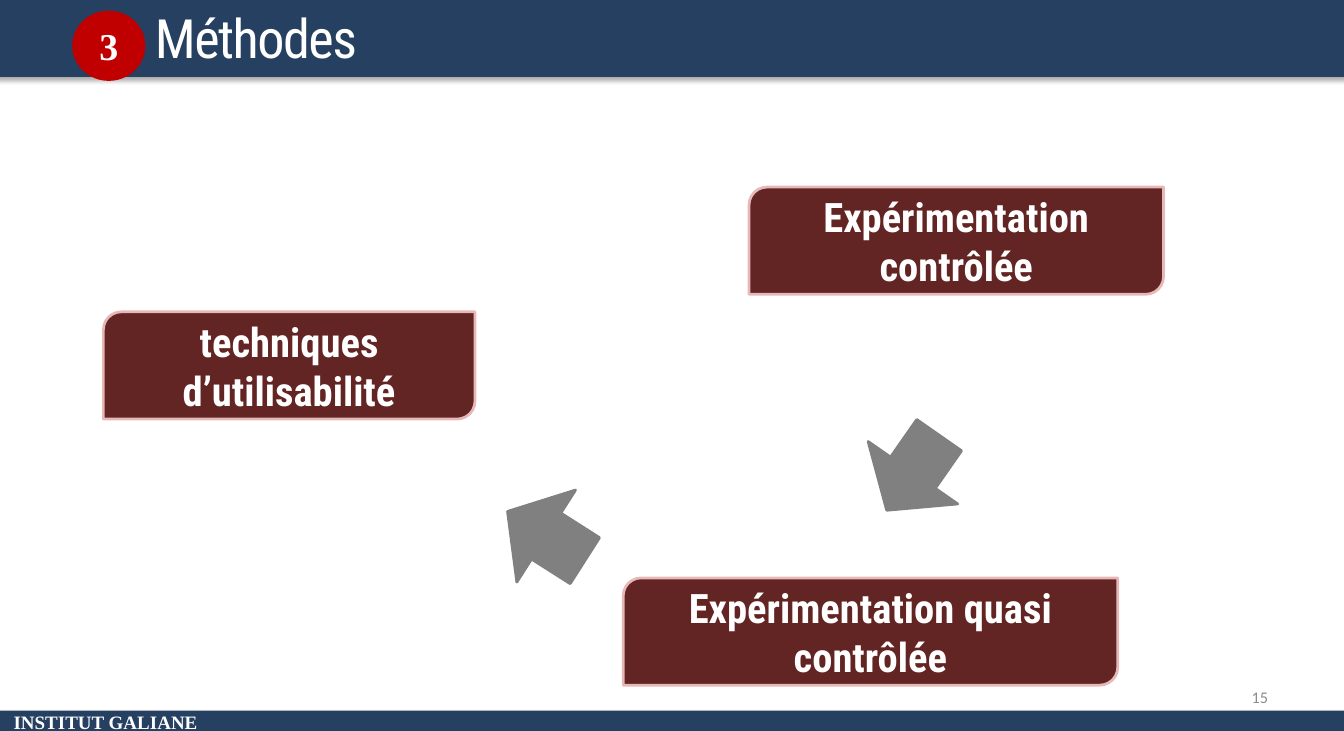
import pptx
import pptx.dml.color
import pptx.enum.shapes
import pptx.enum.text
import pptx.oxml
import pptx.oxml.ns
import pptx.util
from pptx.util import Inches

SHAPE = pptx.enum.shapes.MSO_SHAPE
ALIGN = pptx.enum.text.PP_ALIGN
ANCHOR = pptx.enum.text.MSO_ANCHOR
AUTO_SIZE = pptx.enum.text.MSO_AUTO_SIZE

NAVY, MAROON, PINK = "254061", "632523", "E6B9B8"
RED, GRAY, LIGHT_GRAY, WHITE = "C00000", "808080", "8C8C8C", "FFFFFF"
HEADING_FONT, SERIF_FONT = "Roboto Condensed", "Times New Roman"


def rgb(color):
    return pptx.dml.color.RGBColor.from_string(color)


def add_text(sp, text, size, font, color=WHITE, bold=False, align=ALIGN.LEFT,
             anchor=ANCHOR.TOP, wrap=True):
    tf = sp.text_frame
    tf.text = text
    tf.word_wrap = wrap
    tf.vertical_anchor = anchor
    p = tf.paragraphs[0]
    p.alignment = align
    r = p.runs[0]
    r.font.size = pptx.util.Pt(size)
    r.font.name = font
    r.font.bold = bold
    r.font.color.rgb = rgb(color)
    return tf


def add_box(s, kind, box, fill, line=None):
    sp = s.shapes.add_shape(kind, *map(Inches, box))
    sp.shadow.inherit = False
    sp.fill.solid()
    sp.fill.fore_color.rgb = rgb(fill)
    if line:
        sp.line.color.rgb = rgb(line)
        sp.line.width = pptx.util.Pt(2)
    else:
        sp.line.fill.background()
    return sp


def add_band(s, box):
    sp = add_box(s, SHAPE.RECTANGLE, box, NAVY)
    # Soft shadow falling straight down
    effects = sp._element.spPr.find(pptx.oxml.ns.qn("a:effectLst"))
    effects.append(pptx.oxml.parse_xml(
        f'<a:outerShdw {pptx.oxml.ns.nsdecls("a")} blurRad="44450" '
        'dist="27940" dir="5400000" algn="ctr" rotWithShape="0">'
        '<a:srgbClr val="000000"><a:alpha val="32000"/></a:srgbClr>'
        '</a:outerShdw>'))


def add_method(s, text, left, top, width):
    sp = add_box(s, SHAPE.ROUND_2_DIAG_RECTANGLE, (left, top, width, 1.1),
                 MAROON, PINK)
    add_text(sp, text, 30, HEADING_FONT, bold=True, align=ALIGN.CENTER,
             anchor=ANCHOR.MIDDLE)


def add_arrow(s, left, top, rotation):
    sp = add_box(s, SHAPE.RIGHT_ARROW, (left, top, 0.94, 1.12), GRAY, GRAY)
    sp.rotation = rotation


def add_label(s, box, text, size, font, **style):
    sp = s.shapes.add_textbox(*map(Inches, box))
    return add_text(sp, text, size, font, **style)


def add_badge(s, box, number):
    sp = add_box(s, SHAPE.OVAL, box, RED)
    tf = add_text(sp, number, 28, SERIF_FONT, bold=True, align=ALIGN.CENTER,
                  anchor=ANCHOR.MIDDLE)
    tf.margin_left = tf.margin_right = tf.margin_top = tf.margin_bottom = 0


def main():
    prs = pptx.Presentation()
    prs.slide_width, prs.slide_height = Inches(13.78), Inches(7.5)
    s = prs.slides.add_slide(prs.slide_layouts[6])

    # Footer
    add_band(s, (0, 7.29, 13.78, 0.25))
    tf = add_label(s, (0.04, 7.24, 2.09, 0.57), "INSTITUT GALIANE", 14,
                   SERIF_FONT, bold=True, wrap=False)
    tf.auto_size = AUTO_SIZE.SHAPE_TO_FIT_TEXT

    # Methods
    for method in (("Expérimentation contrôlée", 7.68, 1.92, 4.25),
                   ("techniques d’utilisabilité", 1.06, 3.2, 3.81),
                   ("Expérimentation quasi contrôlée", 6.39, 5.93, 5.07)):
        add_method(s, *method)

    # Arrows from one method to the next
    add_arrow(s, 8.89, 4.29, 124.9)
    add_arrow(s, 5.13, 4.94, 212.5)

    # Slide number
    add_label(s, (9.88, 6.95, 3.22, 0.4), "15", 12, "Calibri",
              color=LIGHT_GRAY, align=ALIGN.RIGHT, anchor=ANCHOR.MIDDLE)

    # Header
    add_band(s, (-0.12, -0.23, 14.02, 1.02))
    tf = add_label(s, (1.49, 0, 4.28, 0.77), "Méthodes", 40, HEADING_FONT)
    tf.auto_size = AUTO_SIZE.SHAPE_TO_FIT_TEXT
    tf.paragraphs[0].runs[0].font._element.set("spc", "-110")
    add_badge(s, (0.74, 0.11, 0.75, 0.72), "3")

    prs.save("out.pptx")


if __name__ == "__main__":
    main()
